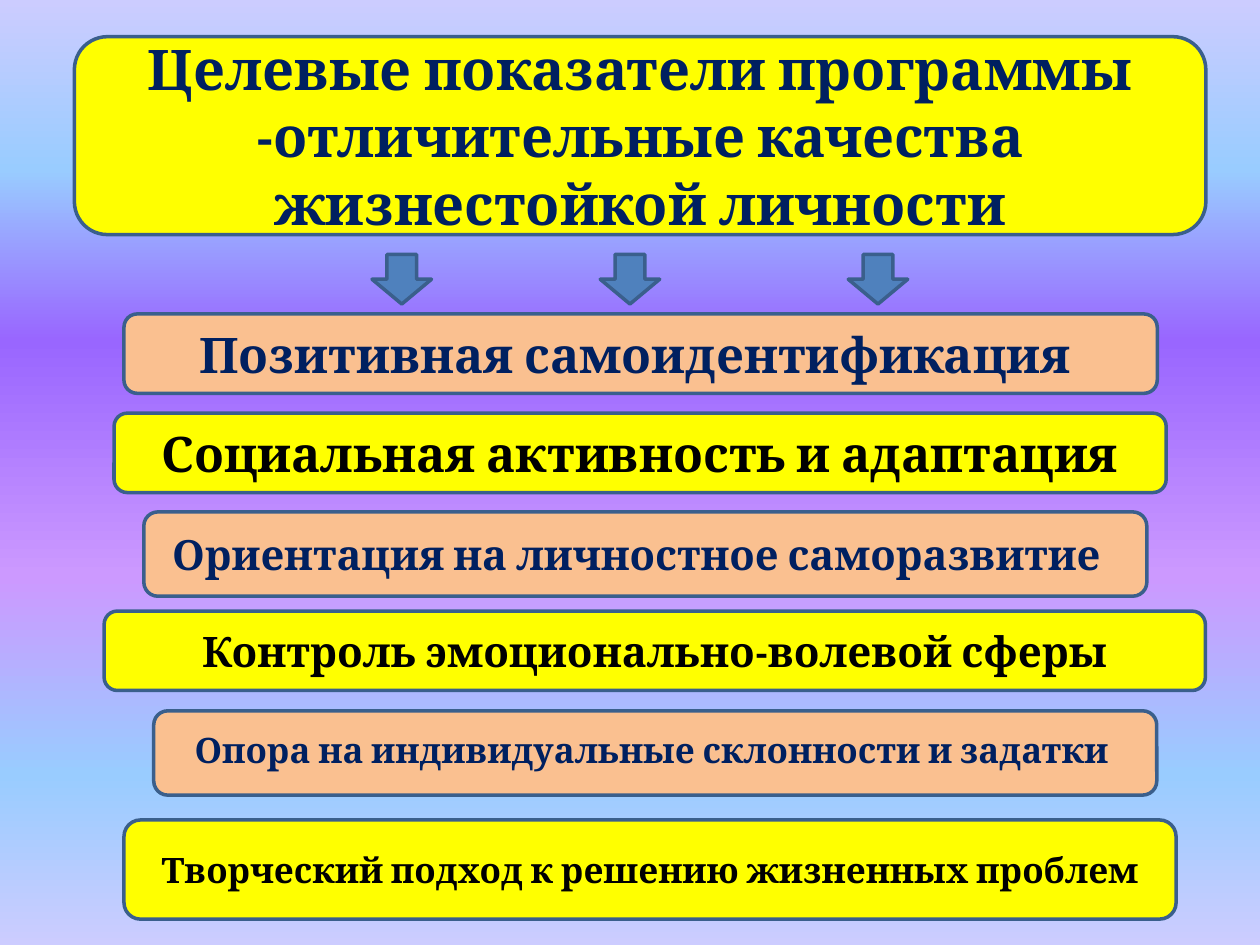
from lxml.etree import SubElement
from pptx import Presentation
from pptx.dml.color import RGBColor
from pptx.enum.shapes import MSO_SHAPE
from pptx.enum.text import MSO_ANCHOR, PP_ALIGN
from pptx.oxml.ns import qn
from pptx.util import Cm, Pt

YELLOW, PEACH, BLUE = "FFFF00", "FAC090", "4F81BD"
NAVY, BLACK, OUTLINE = "002060", "000000", "3A5F8C"


def color(value):
    return RGBColor.from_string(value)


def add_outlined_shape(kind, left, top, width, height, fill):
    shape = page.shapes.add_shape(kind, Cm(left), Cm(top), Cm(width), Cm(height))
    shape.shadow.inherit = False
    shape.fill.solid()
    shape.fill.fore_color.rgb = color(fill)
    shape.line.color.rgb = color(OUTLINE)
    shape.line.width = Pt(2)
    return shape


deck = Presentation()
deck.slide_width = Cm(25.4)
deck.slide_height = Cm(19.05)
page = deck.slides.add_slide(deck.slide_layouts[6])

background = page.background.fill
background.gradient()
background.gradient_angle = 270
stop_list = page.background._cSld.find(".//" + qn("a:gsLst"))
for stop in list(stop_list):
    stop_list.remove(stop)
for position, value in [
    (0, "CCCCFF"), (18, "99CCFF"), (36, "9966FF"),
    (61, "CC99FF"), (82, "99CCFF"), (100, "CCCCFF"),
]:
    stop = SubElement(stop_list, qn("a:gs"), pos=str(position * 1000))
    SubElement(stop, qn("a:srgbClr"), val=value)

panels = [
    ("Целевые показатели программы -отличительные качества жизнестойкой личности",
     1.5, 0.74, 22.81, 3.99, YELLOW, NAVY, 32, False, 1),
    ("Социальная активность и адаптация",
     2.3, 8.33, 21.21, 1.6, YELLOW, BLACK, 28, False, 1),
    ("Позитивная самоидентификация ",
     2.5, 6.33, 20.83, 1.6, PEACH, NAVY, 28, False, 1),
    ("Ориентация на личностное саморазвитие  ",
     2.9, 10.32, 20.22, 1.7, PEACH, NAVY, 23.8, True, 1),
    ("Контроль эмоционально-волевой сферы",
     2.1, 12.32, 22.2, 1.6, YELLOW, BLACK, 24, False, 1),
    ("Опора на индивидуальные склонности и задатки ",
     3.1, 14.33, 20.22, 1.7, PEACH, NAVY, 20, True, 0.8),
    ("Творческий подход к решению жизненных проблем",
     2.5, 16.53, 21.21, 2, YELLOW, BLACK, 20, False, 1),
]
for text, left, top, width, height, fill, ink, size, hanging, spacing in panels:
    box = add_outlined_shape(MSO_SHAPE.ROUNDED_RECTANGLE, left, top, width, height, fill)
    frame = box.text_frame
    frame.word_wrap = True
    frame.vertical_anchor = MSO_ANCHOR.MIDDLE
    frame.text = text
    para = frame.paragraphs[0]
    para.alignment = PP_ALIGN.CENTER
    para.line_spacing = spacing
    if hanging:
        properties = para._p.get_or_add_pPr()
        properties.set("marL", str(Cm(0.95)))
        properties.set("indent", str(-Cm(0.95)))
    span = para.runs[0]
    span.font.name = "Cambria"
    span.font.size = Pt(size)
    span.font.bold = True
    span.font.color.rgb = color(ink)

for left in (7.5, 12.1, 17.1):
    add_outlined_shape(MSO_SHAPE.DOWN_ARROW, left, 5.13, 1.2, 1, BLUE)

deck.save("out.pptx")
